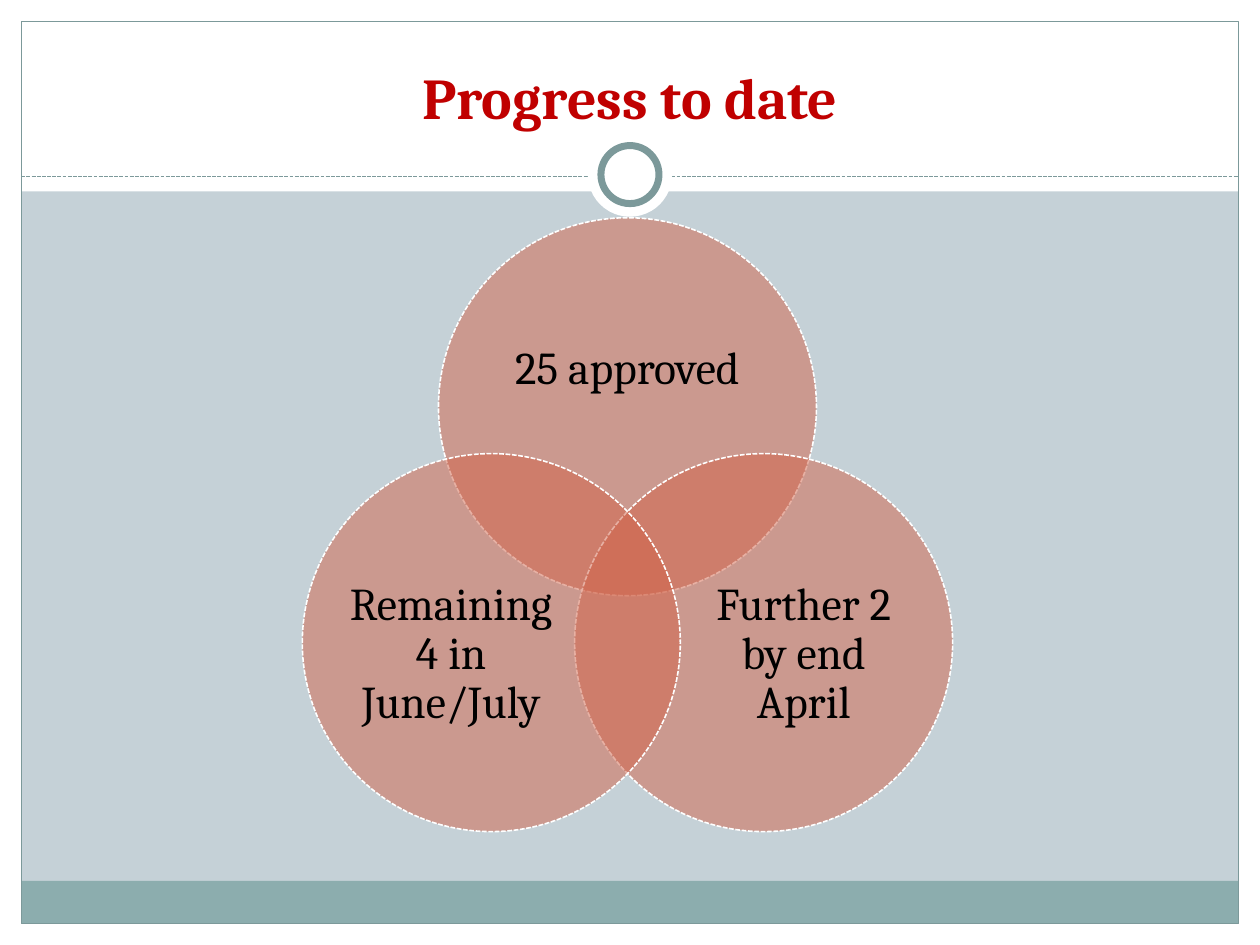
import math

from lxml import etree
from pptx import Presentation
from pptx.dml.color import RGBColor
from pptx.enum import dml, shapes, text
from pptx.oxml.ns import qn
from pptx.util import Cm, Pt

WHITE = RGBColor(0xFF, 0xFF, 0xFF)
BLACK = RGBColor(0, 0, 0)
PALE_BLUE = RGBColor(0xC5, 0xD1, 0xD7)
TEAL = RGBColor(0x8C, 0xAD, 0xAE)
DARK_TEAL = RGBColor(0x7C, 0x99, 0x9A)
RED = RGBColor(0xC0, 0, 0)
CORAL = RGBColor(0xD1, 0x63, 0x49)
FONT = "Cambria"

# Content: label, direction from the centre in degrees, label shift, label size (cm)
TITLE = "Progress to date"
STAGES = [
    ("25 approved", -90, (0, -0.74), (5.59, 3.43)),
    ("Further 2 by end April", 30, (0.81, 0.25), (4.57, 4.19)),
    ("Remaining 4 in June/July", 150, (-0.81, 0.25), (4.57, 4.19)),
]

# Geometry in cm
WIDTH, HEIGHT, MARGIN = 25.4, 19.05, 0.43
HEADER, RULE_Y, FOOTER = 3.86, 3.56, 0.86
RING_Y = 3.52
VENN_X, VENN_Y, VENN_SPREAD, DIAMETER = 12.65, 11.37, 3.17, 7.62

deck = Presentation()
deck.slide_width, deck.slide_height = Cm(WIDTH), Cm(HEIGHT)
page = deck.slides.add_slide(deck.slide_layouts[5])
page.background.fill.solid()
page.background.fill.fore_color.rgb = PALE_BLUE


def style_line(line, color, width, dashed=False):
    line.color.rgb = color
    line.width = Pt(width)
    if dashed:
        line.dash_style = dml.MSO_LINE.SQUARE_DOT


def add_shape(kind, left, top, width, height, fill=None):
    shape = page.shapes.add_shape(kind, Cm(left), Cm(top), Cm(width), Cm(height))
    shape.shadow.inherit = False
    if fill is None:
        shape.fill.background()
    else:
        shape.fill.solid()
        shape.fill.fore_color.rgb = fill
    shape.line.fill.background()
    return shape


def add_circle(center_x, center_y, size, fill):
    return add_shape(shapes.MSO_SHAPE.OVAL, center_x - size / 2,
                     center_y - size / 2, size, size, fill)


def write(frame, words, size, color, anchor, bold=False):
    frame.word_wrap = True
    frame.vertical_anchor = anchor
    para = frame.paragraphs[0]
    para.text = words
    para.alignment = text.PP_ALIGN.CENTER
    para.font.name, para.font.size, para.font.bold = FONT, Pt(size), bold
    para.font.color.rgb = color
    return para


# White margins, header and footer band
RECTANGLE = shapes.MSO_SHAPE.RECTANGLE
inner_width = WIDTH - 2 * MARGIN
bands = [
    (0, HEIGHT - MARGIN, WIDTH, MARGIN, WHITE),
    (0, 0, WIDTH, HEADER, WHITE),
    (0, 0, MARGIN, HEIGHT, WHITE),
    (WIDTH - MARGIN, 0, MARGIN, HEIGHT, WHITE),
    (MARGIN, HEIGHT - MARGIN - FOOTER, inner_width, FOOTER, TEAL),
]
for band in bands:
    add_shape(RECTANGLE, *band)

# Frame, dashed rule and ring
border = add_shape(RECTANGLE, MARGIN, MARGIN, inner_width, HEIGHT - 2 * MARGIN)
style_line(border.line, DARK_TEAL, 0.75)
rule = page.shapes.add_connector(shapes.MSO_CONNECTOR.STRAIGHT, Cm(MARGIN),
                                 Cm(RULE_Y), Cm(WIDTH - MARGIN), Cm(RULE_Y))
style_line(rule.line, DARK_TEAL, 0.75, dashed=True)
etree.SubElement(rule.element.spPr, qn("a:effectLst"))
add_circle(WIDTH / 2, RING_Y, 1.7, WHITE)
ring = add_circle(WIDTH / 2, RING_Y, 1.17, WHITE)
style_line(ring.line, DARK_TEAL, 4)

# Title, brought in front of the header band
title = page.shapes.title
title.left, title.top, title.width, title.height = Cm(0.85), Cm(0.64), Cm(23.7), Cm(2.12)
write(title.text_frame, TITLE, 33, RED, text.MSO_ANCHOR.BOTTOM, bold=True)
page.shapes.element.append(title.element)

# Venn circles with their labels
for label, angle, (shift_x, shift_y), (width, height) in STAGES:
    x = VENN_X + VENN_SPREAD * math.cos(math.radians(angle))
    y = VENN_Y + VENN_SPREAD * math.sin(math.radians(angle))
    circle = add_circle(x, y, DIAMETER, CORAL)
    style_line(circle.line, WHITE, 0.9, dashed=True)
    color = circle.fill._xPr.find(qn("a:solidFill"))[0]
    etree.SubElement(color, qn("a:alpha"), val="50000")

    box = page.shapes.add_textbox(Cm(x + shift_x - width / 2), Cm(y + shift_y - height / 2),
                                  Cm(width), Cm(height))
    frame = box.text_frame
    frame.margin_left = frame.margin_right = frame.margin_top = frame.margin_bottom = 0
    para = write(frame, label, 26, BLACK, text.MSO_ANCHOR.MIDDLE)
    para.line_spacing = 0.9

deck.save("out.pptx")
